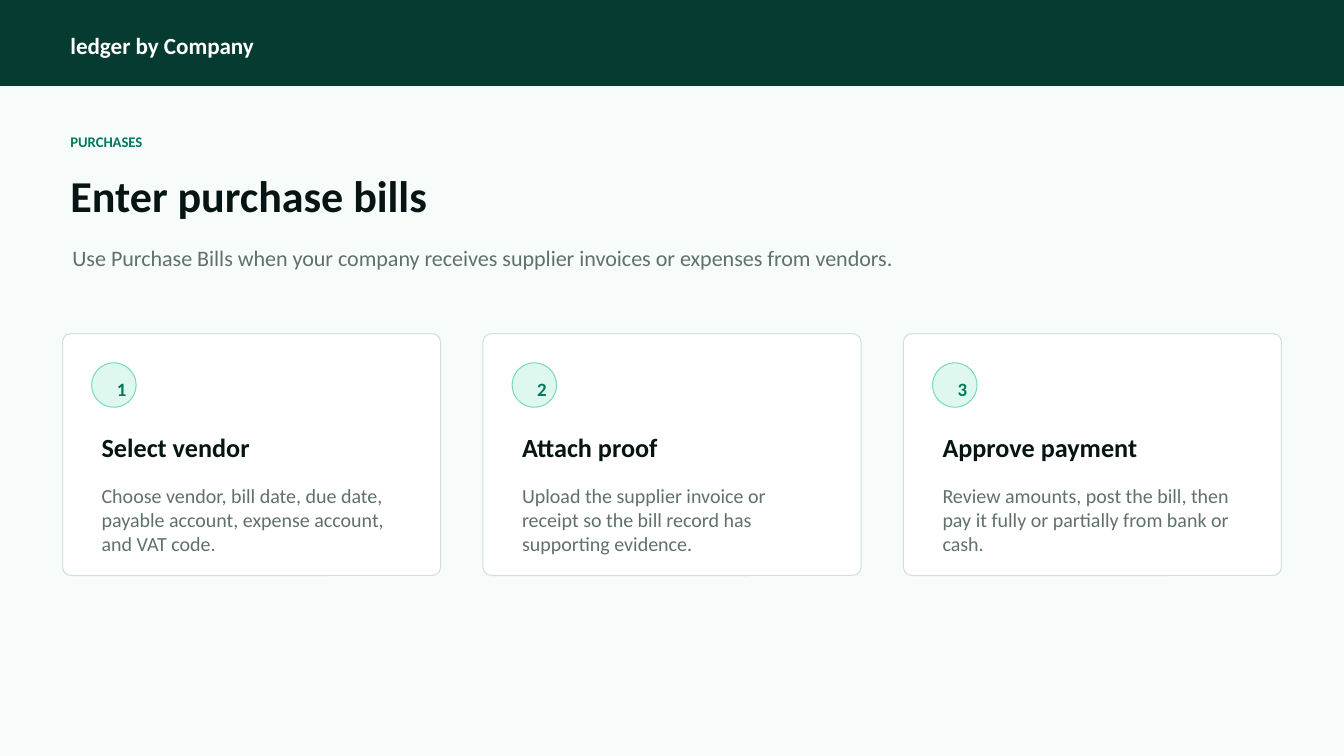
"""Build the purchase bills slide with three step cards."""
import pptx
import pptx.dml.color
import pptx.enum.shapes
import pptx.util

Inches = pptx.util.Inches
RGBColor = pptx.dml.color.RGBColor
Shapes = pptx.enum.shapes.MSO_SHAPE

BACKGROUND = RGBColor(0xF7, 0xFB, 0xFA)
DARK_GREEN = RGBColor(0x05, 0x3B, 0x31)
GREEN = RGBColor(0x00, 0x7A, 0x5A)
INK = RGBColor(0x06, 0x15, 0x13)
GREY = RGBColor(0x60, 0x71, 0x6C)
WHITE = RGBColor(0xFF, 0xFF, 0xFF)
CARD_LINE = RGBColor(0xCF, 0xE2, 0xDC)
BADGE_FILL = RGBColor(0xDF, 0xF8, 0xEF)
BADGE_LINE = RGBColor(0x79, 0xD9, 0xBF)

CARD_LEFT = 0.62
CARD_PITCH = 4.17
STEPS = [
    ("Select vendor",
     "Choose vendor, bill date, due date, payable account, expense account, and VAT code."),
    ("Attach proof",
     "Upload the supplier invoice or receipt so the bill record has supporting evidence."),
    ("Approve payment",
     "Review amounts, post the bill, then pay it fully or partially from bank or cash."),
]


def add_panel(slide, kind, left, top, width, height, fill, line):
    """Add a filled and outlined preset shape."""
    shape = slide.shapes.add_shape(
        kind, Inches(left), Inches(top), Inches(width), Inches(height))
    shape.shadow.inherit = False
    shape.fill.solid()
    shape.fill.fore_color.rgb = fill
    shape.line.color.rgb = line
    shape.line.width = pptx.util.Pt(0.75)
    return shape


def add_text(slide, text, left, top, width, height, size, color, bold=False):
    """Add a wrapping text box with one run."""
    box = slide.shapes.add_textbox(
        Inches(left), Inches(top), Inches(width), Inches(height))
    box.text_frame.word_wrap = True
    run = box.text_frame.paragraphs[0].add_run()
    run.text = text
    run.font.name = "Calibri"
    run.font.size = pptx.util.Pt(size)
    run.font.bold = bold
    run.font.color.rgb = color


def add_step_card(slide, number, left, title, description):
    """Add a card with a numbered badge, a title and a description."""
    card = add_panel(slide, Shapes.ROUNDED_RECTANGLE, left, 3.31, 3.75, 2.4,
                     WHITE, CARD_LINE)
    card.adjustments[0] = 0.035
    inner = left + 0.29
    add_panel(slide, Shapes.OVAL, inner, 3.6, 0.44, 0.44, BADGE_FILL, BADGE_LINE)
    add_text(slide, str(number), inner + 0.15, 3.7, 0.21, 0.25, 13.5, GREEN, True)
    add_text(slide, title, inner, 4.23, 3.17, 0.44, 18.75, INK, True)
    add_text(slide, description, inner, 4.75, 3.17, 0.73, 14.25, GREY)


def main():
    """Build and save the slide."""
    presentation = pptx.Presentation()
    presentation.slide_width = Inches(13.33)
    presentation.slide_height = Inches(7.5)
    slide = presentation.slides.add_slide(presentation.slide_layouts[6])
    slide.background.fill.solid()
    slide.background.fill.fore_color.rgb = BACKGROUND

    add_panel(slide, Shapes.RECTANGLE, 0, 0, 13.33, 0.85, DARK_GREEN, DARK_GREEN)
    add_text(slide, "ledger by Company", 0.6, 0.26, 2.92, 0.35, 16.5, WHITE, True)
    add_text(slide, "PURCHASES", 0.6, 1.27, 4.48, 0.29, 10.5, GREEN, True)
    add_text(slide, "Enter purchase bills", 0.6, 1.62, 9.38, 0.69, 31.5, INK, True)
    add_text(slide, "Use Purchase Bills when your company receives supplier invoices "
             "or expenses from vendors.", 0.62, 2.38, 10, 0.5, 15.75, GREY)
    for index, (title, description) in enumerate(STEPS):
        add_step_card(slide, index + 1, CARD_LEFT + index * CARD_PITCH,
                      title, description)
    presentation.save("out.pptx")


if __name__ == "__main__":
    main()
